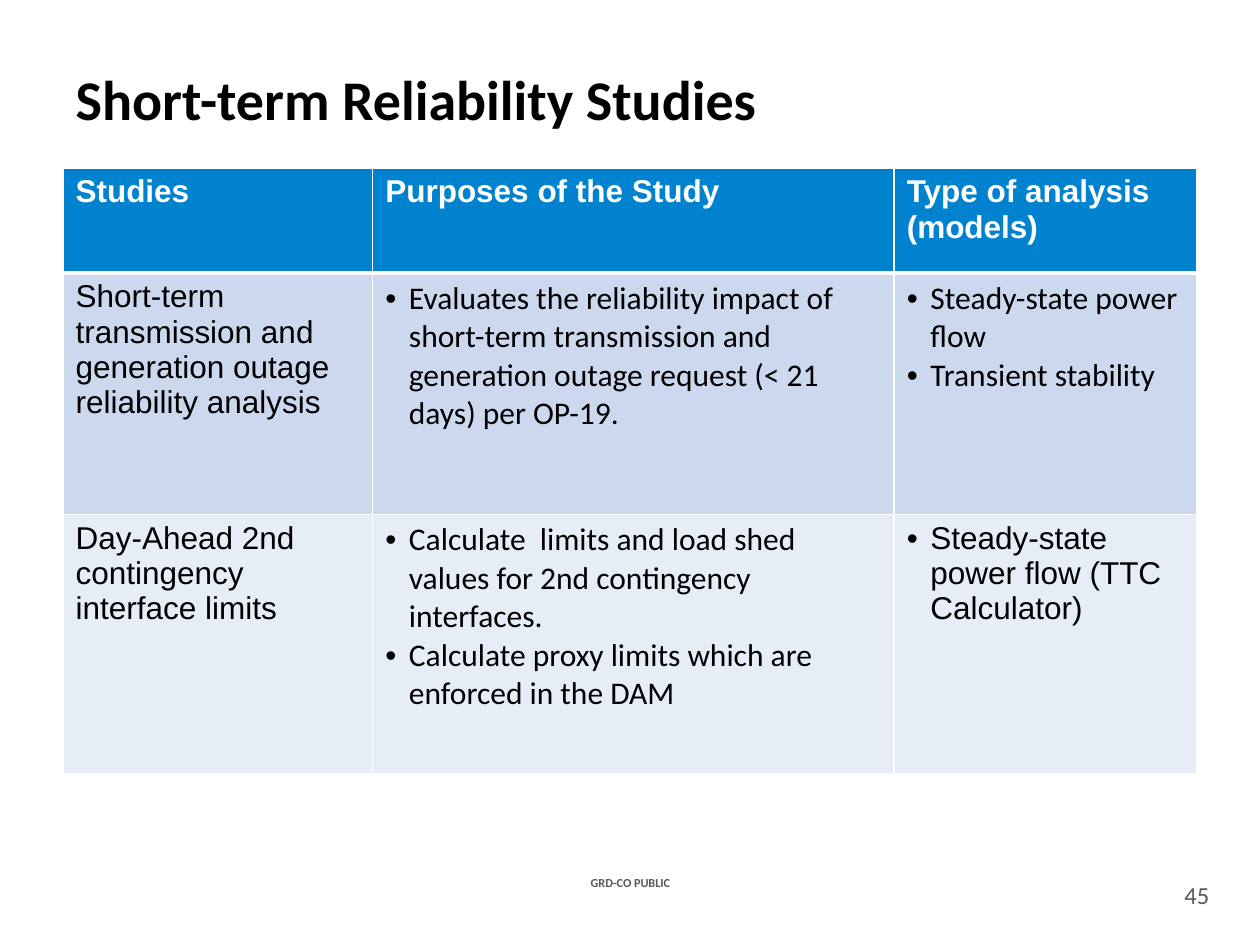
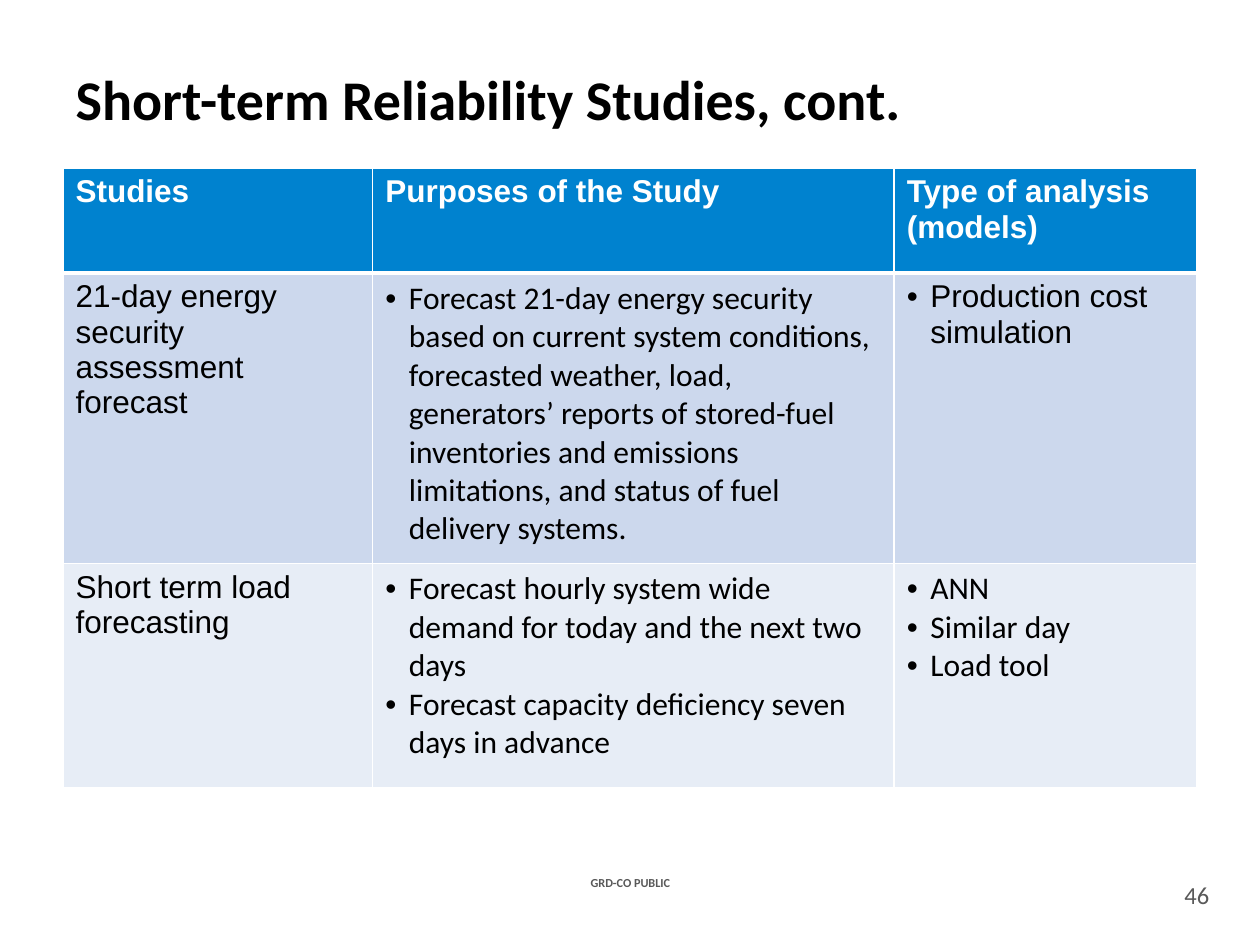
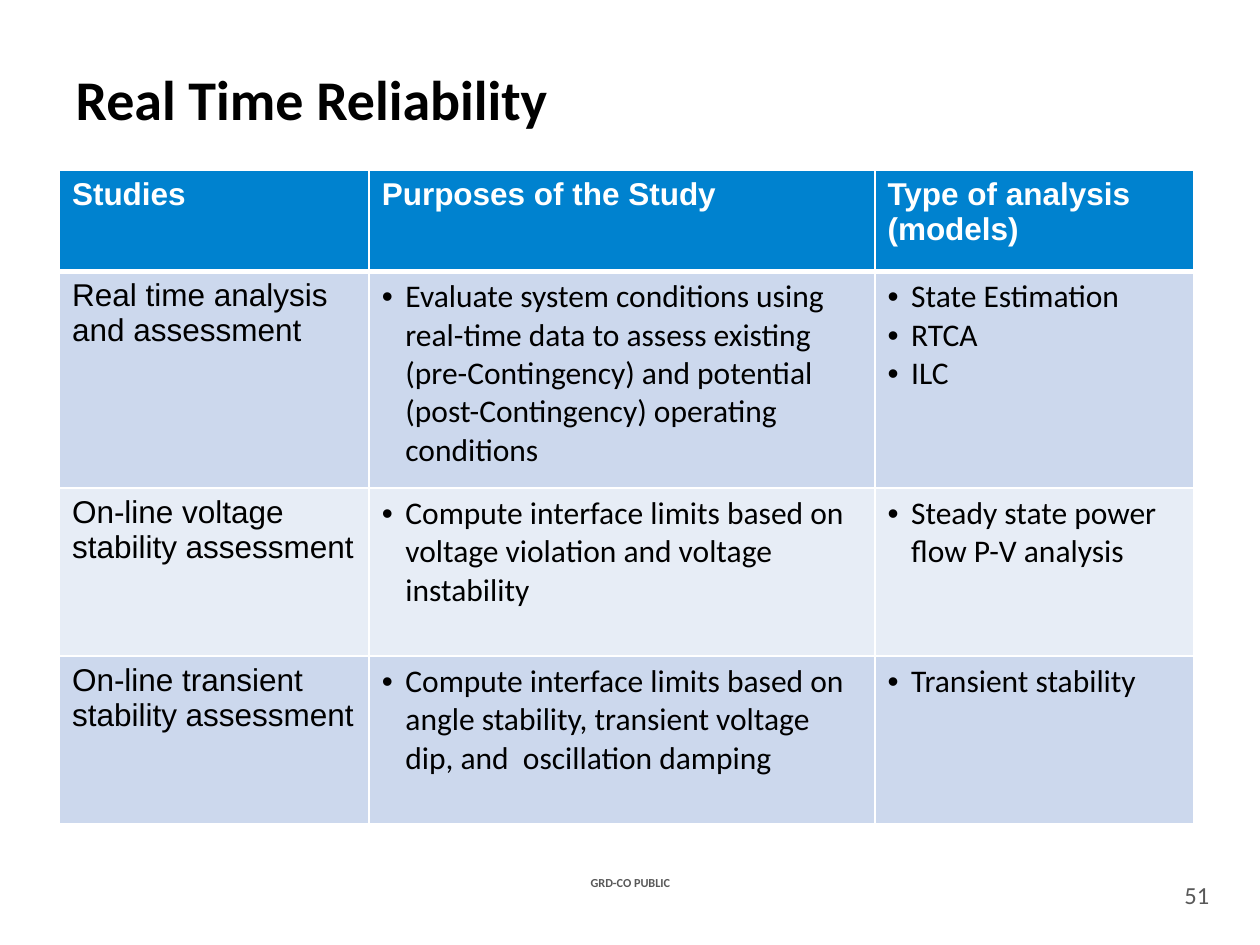
from collections import namedtuple

from lxml.etree import SubElement
from pptx import Presentation
from pptx.dml.color import RGBColor
from pptx.enum.text import MSO_ANCHOR, MSO_AUTO_SIZE, PP_ALIGN
from pptx.oxml.ns import qn
from pptx.util import Pt

COLORS = {
    "header": "0082CF",
    "odd_row": "CCD8ED",
    "even_row": "E7EDF6",
    "text": "000000",
    "light": "FFFFFF",
    "muted": "595959",
}
BODY_FONT = "Calibri"
LABEL_FONT = "Arial"
TABLE_SIZE = 18
BULLET_INDENT = 13.5
HEADINGS = ["Studies", "Purposes of the Study", "Type of analysis\n(models)"]

Bullets = namedtuple("Bullets", "items font", defaults=[BODY_FONT])
Study = namedtuple("Study", "height label purposes models")
StudySlide = namedtuple("StudySlide", "title number left top widths header_height studies")

SLIDES = [
    StudySlide("Short-term Reliability Studies", "45", 36, 96, (177, 298, 173), 60, [
        Study(138, "Short-term transmission and generation outage reliability analysis",
              Bullets(["Evaluates the reliability impact of short-term transmission and "
                       "generation outage request (< 21 days) per OP-19."]),
              Bullets(["Steady-state power flow", "Transient stability"])),
        Study(148, "Day-Ahead 2nd contingency interface limits",
              Bullets(["Calculate  limits and load shed values for 2nd contingency interfaces.",
                       "Calculate proxy limits which are enforced in the DAM"]),
              Bullets(["Steady-state power flow (TTC Calculator)"], LABEL_FONT)),
    ]),
    StudySlide("Short-term Reliability Studies, cont.", "46", 36, 96, (177, 298, 173), 60, [
        Study(166, "21-day energy security assessment forecast",
              Bullets(["Forecast 21-day energy security based on current system conditions, "
                       "forecasted weather, load, generators’ reports of stored-fuel "
                       "inventories and emissions limitations, and status of fuel "
                       "delivery systems."]),
              Bullets(["Production cost simulation"], LABEL_FONT)),
        Study(128, "Short term load forecasting",
              Bullets(["Forecast hourly system wide demand for today and the next two days",
                       "Forecast capacity deficiency seven days in advance"]),
              Bullets(["ANN", "Similar day", "Load tool"])),
    ]),
    StudySlide("Real Time Reliability", "51", 34, 97.5, (177, 289, 182), 57.5, [
        Study(124, "Real time analysis and assessment",
              Bullets(["Evaluate system conditions using real-time data to assess existing "
                       "(pre-Contingency) and potential (post-Contingency) operating "
                       "conditions"]),
              Bullets(["State Estimation", "RTCA", "ILC"])),
        Study(96, "On-line voltage stability assessment",
              Bullets(["Compute interface limits based on voltage violation and voltage "
                       "instability"]),
              Bullets(["Steady state power flow P-V analysis"])),
        Study(96, "On-line transient stability assessment",
              Bullets(["Compute interface limits based on angle stability, transient "
                       "voltage dip, and  oscillation damping"]),
              Bullets(["Transient stability"])),
    ]),
]


def rgb(name):
    return RGBColor.from_string(COLORS[name])


def add_run(p, text, size, color, font=BODY_FONT, bold=False):
    r = p.add_run()
    r.text = text
    r.font.name = font
    r.font.size = Pt(size)
    r.font.bold = bold
    r.font.color.rgb = rgb(color)


def add_title(slide, text):
    sp = slide.shapes.title
    sp.left, sp.top, sp.width, sp.height = Pt(36), Pt(21.6), Pt(648), Pt(68.4)
    tf = sp.text_frame
    tf.auto_size = MSO_AUTO_SIZE.NONE
    tf.vertical_anchor = MSO_ANCHOR.MIDDLE
    p = tf.paragraphs[0]
    p.alignment = PP_ALIGN.LEFT
    add_run(p, text, 32, "text", bold=True)


def add_label(slide, text, left, top, width, height, size, bold=False):
    sp = slide.shapes.add_textbox(Pt(left), Pt(top), Pt(width), Pt(height))
    tf = sp.text_frame
    tf.word_wrap = True
    tf.vertical_anchor = MSO_ANCHOR.MIDDLE
    tf.margin_left = tf.margin_right = tf.margin_top = tf.margin_bottom = 0
    p = tf.paragraphs[0]
    p.alignment = PP_ALIGN.CENTER
    add_run(p, text, size, "muted", bold=bold)


def add_footer(slide, number):
    add_label(slide, "GRD-CO PUBLIC", 307.5, 498, 105.5, 12.5, 7, bold=True)
    add_label(slide, number, 671.75, 501, 24.5, 21, 14)


def add_bullet(p):
    pPr = p._p.get_or_add_pPr()
    pPr.set("marL", str(Pt(BULLET_INDENT)))
    pPr.set("indent", str(-Pt(BULLET_INDENT)))
    SubElement(pPr, qn("a:buFont"), typeface="Arial")
    SubElement(pPr, qn("a:buChar"), char="•")


def set_borders(cell, top=1, bottom=1):
    tcPr = cell._tc.get_or_add_tcPr()
    for side, width in (("L", 1), ("R", 1), ("T", top), ("B", bottom)):
        ln = SubElement(tcPr, qn(f"a:ln{side}"), w=str(Pt(width)))
        fill = SubElement(ln, qn("a:solidFill"))
        SubElement(fill, qn("a:srgbClr"), val=COLORS["light"])


def fill_cell(cell, content, row):
    header = row == 0
    set_borders(cell, top=3 if row == 1 else 1, bottom=3 if header else 1)
    cell.fill.solid()
    cell.fill.fore_color.rgb = rgb("header" if header else "odd_row" if row % 2 else "even_row")
    bulleted = isinstance(content, Bullets)
    lines = content.items if bulleted else content.split("\n")
    font = content.font if bulleted else LABEL_FONT
    tf = cell.text_frame
    for i, line in enumerate(lines):
        p = tf.add_paragraph() if i else tf.paragraphs[0]
        if bulleted:
            add_bullet(p)
        add_run(p, line, TABLE_SIZE, "light" if header else "text", font, header)


def add_study_table(slide, data):
    rows = [HEADINGS] + [study[1:] for study in data.studies]
    heights = [data.header_height] + [study.height for study in data.studies]
    frame = slide.shapes.add_table(len(rows), len(HEADINGS), Pt(data.left), Pt(data.top),
                                   Pt(sum(data.widths)), Pt(sum(heights)))
    table = frame.table
    for column, width in zip(table.columns, data.widths):
        column.width = Pt(width)
    for i, (contents, height) in enumerate(zip(rows, heights)):
        table.rows[i].height = Pt(height)
        for j, content in enumerate(contents):
            fill_cell(table.cell(i, j), content, i)


def main():
    prs = Presentation()
    prs.slide_width, prs.slide_height = Pt(720), Pt(540)
    for data in SLIDES:
        slide = prs.slides.add_slide(prs.slide_layouts[5])
        add_title(slide, data.title)
        add_study_table(slide, data)
        add_footer(slide, data.number)
    prs.save("out.pptx")


if __name__ == "__main__":
    main()
